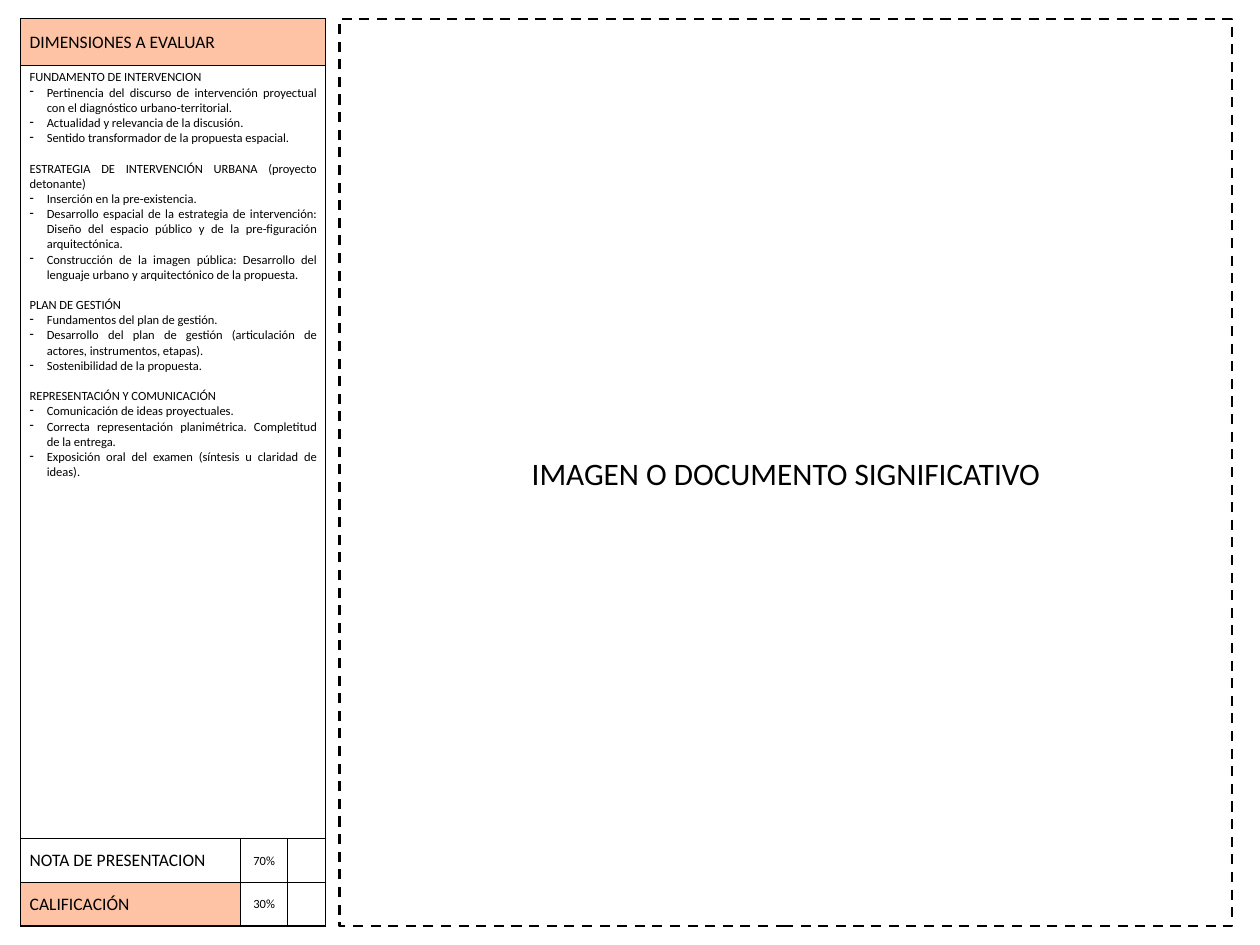
from pptx import Presentation
from pptx.dml.color import RGBColor as RGB
from pptx.enum.dml import MSO_LINE as Dash
from pptx.enum.shapes import MSO_SHAPE as Shape
from pptx.enum.text import MSO_ANCHOR as Anchor, PP_ALIGN as Align
from pptx.oxml import parse_xml
from pptx.oxml.ns import nsdecls
from pptx.util import Inches, Pt

COLORS = {"ink": "000000", "paper": "FFFFFF", "peach": "FDC3A4"}
TOP, HIGH = 0.21, 10.08
COLS = [2.44, 0.53, 0.42]
ROWS = [0.52, 8.59, 0.49, 0.48]

TOPICS = {
    "FUNDAMENTO DE INTERVENCION": [
        "Pertinencia del discurso de intervención proyectual con el diagnóstico urbano-territorial.",
        "Actualidad y relevancia de la discusión.",
        "Sentido transformador de la propuesta espacial.",
    ],
    "ESTRATEGIA DE INTERVENCIÓN URBANA (proyecto detonante)": [
        "Inserción en la pre-existencia.",
        "Desarrollo espacial de la estrategia de intervención: Diseño del espacio público "
        "y de la pre-figuración arquitectónica.",
        "Construcción de la imagen pública: Desarrollo del lenguaje urbano y arquitectónico "
        "de la propuesta.",
    ],
    "PLAN DE GESTIÓN": [
        "Fundamentos del plan de gestión.",
        "Desarrollo del plan de gestión (articulación de actores, instrumentos, etapas).",
        "Sostenibilidad de la propuesta.",
    ],
    "REPRESENTACIÓN Y COMUNICACIÓN": [
        "Comunicación de ideas proyectuales.",
        "Correcta representación planimétrica. Completitud de la entrega.",
        "Exposición oral del examen (síntesis u claridad de ideas).",
    ],
}


class Sheet:
    def __init__(self, slide):
        self.slide = slide
        self.font = "Calibri"

    def color(self, name):
        return RGB.from_string(COLORS[name])

    def line(self, para, text, size, align=Align.LEFT):
        para.text = text
        para.alignment = align
        para.font.name = self.font
        para.font.size = Pt(size)
        para.font.color.rgb = self.color("ink")

    def bullet(self, para):
        props = para._p.get_or_add_pPr()
        props.set("marL", str(Inches(0.19)))
        props.set("indent", str(-Inches(0.19)))
        props.insert(0, parse_xml(f'<a:buChar {nsdecls("a")} char="-"/>'))

    def frame(self, x, y, w, h, text):
        box = self.slide.shapes.add_shape(
            Shape.RECTANGLE, Inches(x), Inches(y), Inches(w), Inches(h))
        box.shadow.inherit = False
        box.fill.background()
        box.line.color.rgb = self.color("ink")
        box.line.width = Pt(2)
        box.line.dash_style = Dash.DASH
        box.text_frame.vertical_anchor = Anchor.MIDDLE
        self.line(box.text_frame.paragraphs[0], text, 25, Align.CENTER)

    def table(self, x, y, cols, rows):
        grid = self.slide.shapes.add_table(
            len(rows), len(cols), Inches(x), Inches(y),
            Inches(sum(cols)), Inches(sum(rows))).table
        grid.first_row = grid.horz_banding = False
        for col, width in zip(grid.columns, cols):
            col.width = Inches(width)
        for row, height in zip(grid.rows, rows):
            row.height = Inches(height)
            for cell in row.cells:
                self.shade(cell, "paper")
                self.border(cell)
        return grid

    def shade(self, cell, name):
        cell.fill.solid()
        cell.fill.fore_color.rgb = self.color(name)

    def border(self, cell):
        props = cell._tc.get_or_add_tcPr()
        for i, side in enumerate("LRTB"):
            props.insert(i, parse_xml(
                f'<a:ln{side} {nsdecls("a")} w="{Pt(1)}"><a:solidFill>'
                f'<a:srgbClr val="{COLORS["ink"]}"/></a:solidFill></a:ln{side}>'))

    def label(self, cell, text, size=14, align=Align.LEFT):
        cell.vertical_anchor = Anchor.MIDDLE
        self.line(cell.text_frame.paragraphs[0], text, size, align)

    def topics(self, cell, topics):
        frame = cell.text_frame
        for i, (head, items) in enumerate(topics.items()):
            para = frame.add_paragraph() if i else frame.paragraphs[0]
            self.line(para, head, 10, Align.JUSTIFY)
            para.space_before = Pt(12.2 if i else 0)
            for item in items:
                para = frame.add_paragraph()
                self.line(para, item, 10, Align.JUSTIFY)
                self.bullet(para)


def main():
    deck = Presentation()
    deck.slide_width, deck.slide_height = Inches(14), Inches(10.5)
    sheet = Sheet(deck.slides.add_slide(deck.slide_layouts[6]))

    # Image area
    sheet.frame(3.77, TOP, 9.92, HIGH, "IMAGEN O DOCUMENTO SIGNIFICATIVO")

    # Evaluation table: heading and criteria span all columns
    grid = sheet.table(0.23, TOP, COLS, ROWS)
    for r in (0, 1):
        grid.cell(r, 0).merge(grid.cell(r, 2))
    sheet.label(grid.cell(0, 0), "DIMENSIONES A EVALUAR")
    sheet.topics(grid.cell(1, 0), TOPICS)

    # Grade rows
    grades = [("NOTA DE PRESENTACION", "70%"), ("CALIFICACIÓN", "30%")]
    for r, (name, share) in enumerate(grades, 2):
        sheet.label(grid.cell(r, 0), name)
        sheet.label(grid.cell(r, 1), share, 10, Align.CENTER)
    for r in (0, 3):
        sheet.shade(grid.cell(r, 0), "peach")

    deck.save("out.pptx")


if __name__ == "__main__":
    main()
